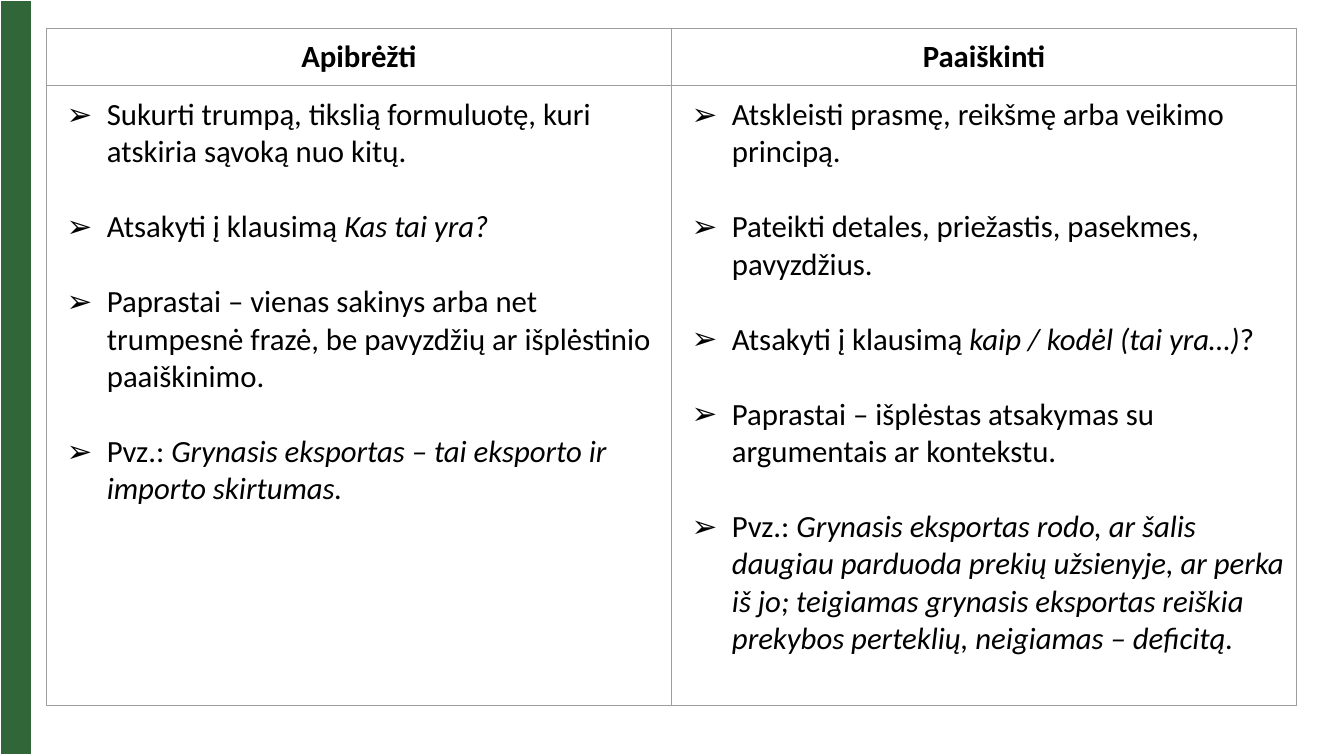
from lxml.etree import SubElement
from pptx import Presentation
from pptx.dml.color import RGBColor
from pptx.enum.text import PP_ALIGN
from pptx.oxml import parse_xml
from pptx.oxml.ns import nsdecls, qn
from pptx.util import Inches, Pt

DEFINE_POINTS = [
    ["Sukurti trumpą, tikslią formuluotę, kuri atskiria sąvoką nuo kitų."],
    ["Atsakyti į klausimą ", "Kas tai yra?"],
    ["Paprastai – vienas sakinys arba net trumpesnė frazė, "
     "be pavyzdžių ar išplėstinio paaiškinimo."],
    ["Pvz.: ", "Grynasis eksportas – tai eksporto ir importo skirtumas."],
]
EXPLAIN_POINTS = [
    ["Atskleisti prasmę, reikšmę arba veikimo principą."],
    ["Pateikti detales, priežastis, pasekmes, pavyzdžius."],
    ["Atsakyti į klausimą ", "kaip / kodėl (tai yra…)", "?"],
    ["Paprastai – išplėstas atsakymas su argumentais ar kontekstu."],
    ["Pvz.: ", "Grynasis eksportas rodo, ar šalis daugiau parduoda prekių "
     "užsienyje, ar perka iš jo; teigiamas grynasis eksportas reiškia "
     "prekybos perteklių, neigiamas – deficitą."],
]


def rgb(color):
    return RGBColor.from_string(color)


def add_text(paragraph, text, size=22, font="Calibri", color="000000",
             bold=False, italic=False):
    run = paragraph.add_run()
    run.text = text
    run.font.size = Pt(size)
    run.font.name = font
    run.font.color.rgb = rgb(color)
    run.font.bold = bold
    run.font.italic = italic


class SlideBuilder:
    bar_color = "316738"
    grid_color = "9E9E9E"
    cell_margin = Inches(0.1)
    bullet_gap = Pt(26.8)

    def __init__(self, slide):
        self.slide = slide

    def table(self, left, top, column_widths, row_heights):
        """Add a plain table without banding or header style."""
        frame = self.slide.shapes.add_table(
            len(row_heights), len(column_widths), Inches(left), Inches(top),
            Inches(sum(column_widths)), Inches(sum(row_heights)))
        table = frame.table
        table.first_row = table.horz_banding = False
        for column, width in zip(table.columns, column_widths):
            column.width = Inches(width)
        for row, height in zip(table.rows, row_heights):
            row.height = Inches(height)
        return table

    def borders(self, cell, color, widths):
        """Draw the left, right, top and bottom borders, widths in points."""
        properties = cell._tc.get_or_add_tcPr()
        for index, (side, width) in enumerate(zip("LRTB", widths)):
            properties.insert(index, parse_xml(
                f'<a:ln{side} {nsdecls("a")} w="{Pt(width)}"><a:solidFill>'
                f'<a:srgbClr val="{color}"/></a:solidFill></a:ln{side}>'))

    def side_bar(self):
        cell = self.table(0, 0, [0.31], [7.5]).cell(0, 0)
        cell.fill.solid()
        cell.fill.fore_color.rgb = rgb(self.bar_color)
        self.borders(cell, "FFFFFF", [1, 1, 1, 3])

    def comparison(self, columns):
        table = self.table(0.46, 0.28, [6.2] * len(columns), [0.57, 6.15])
        for cell in table.iter_cells():
            cell.fill.background()
            self.borders(cell, self.grid_color, [0.75] * 4)
            cell.margin_left = cell.margin_right = self.cell_margin
            cell.margin_top = cell.margin_bottom = self.cell_margin
        for index, (heading, points) in enumerate(columns):
            paragraph = table.cell(0, index).text_frame.paragraphs[0]
            paragraph.alignment = PP_ALIGN.CENTER
            add_text(paragraph, heading, bold=True)
            self.bullets(table.cell(1, index).text_frame, points)

    def bullets(self, text_frame, points):
        """Write one bullet per point; every second part is italic."""
        for index, parts in enumerate(points):
            paragraph = (text_frame.add_paragraph() if index
                         else text_frame.paragraphs[0])
            self.bullet_style(paragraph)
            if index:
                paragraph.space_before = self.bullet_gap
            for position, part in enumerate(parts):
                add_text(paragraph, part, italic=position % 2 == 1)

    def bullet_style(self, paragraph, color="000000"):
        properties = paragraph._p.get_or_add_pPr()
        properties.set("marL", str(Inches(0.5)))
        properties.set("indent", str(Inches(-0.4)))
        bullet_color = SubElement(properties, qn("a:buClr"))
        SubElement(bullet_color, qn("a:srgbClr"), val=color)
        SubElement(properties, qn("a:buFont"), typeface="Calibri")
        SubElement(properties, qn("a:buChar"), char="➢")


def main():
    presentation = Presentation()
    presentation.slide_width = Inches(13.33)
    presentation.slide_height = Inches(7.5)
    slide = presentation.slides.add_slide(presentation.slide_layouts[6])
    builder = SlideBuilder(slide)
    builder.side_bar()
    builder.comparison([("Apibrėžti", DEFINE_POINTS),
                        ("Paaiškinti", EXPLAIN_POINTS)])
    presentation.save("out.pptx")


if __name__ == "__main__":
    main()
